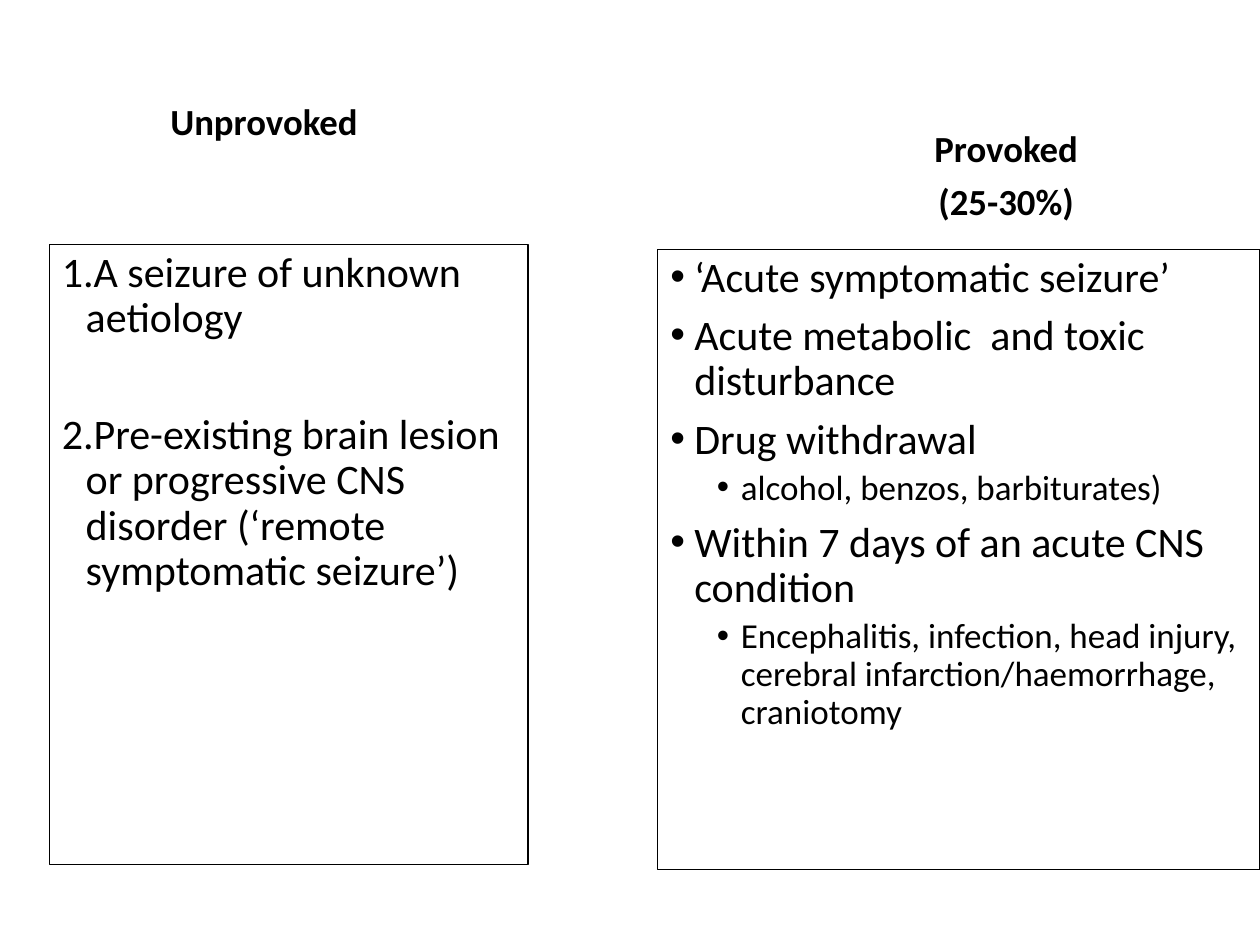
from lxml.etree import SubElement as Sub
from pptx import Presentation
from pptx.dml.color import RGBColor
from pptx.enum.text import MSO_ANCHOR as Anchor, MSO_AUTO_SIZE as Fit, PP_ALIGN as Align
from pptx.oxml.ns import qn
from pptx.util import Inches, Pt

INK = "000000"
HEADS = [
    (1, (0, 0.44, 4.19, 0.75), ["Unprovoked"]),
    (3, (5.97, 1.07, 4.03, 0.75), ["Provoked", "(25-30%)"]),
]
LISTS = [
    (2, (0.39, 1.94, 3.8, 4.92), "number", 41, [
        (0, "A seizure of unknown aetiology"),
        (0, "Pre-existing brain lesion or progressive CNS disorder "
            "(‘remote symptomatic seizure’)"),
    ]),
    (4, (5.22, 1.98, 4.78, 4.92), "dot", 7.5, [
        (0, "‘Acute symptomatic seizure’"),
        (0, "Acute metabolic  and toxic disturbance"),
        (0, "Drug withdrawal"),
        (1, "alcohol, benzos, barbiturates)"),
        (0, "Within 7 days of an acute CNS condition"),
        (1, "Encephalitis, infection, head injury, "
            "cerebral infarction/haemorrhage, craniotomy"),
    ]),
]


def color(code):
    return RGBColor.from_string(code)


def place(shape, box, anchor):
    shape.left, shape.top, shape.width, shape.height = map(Inches, box)
    frame = shape.text_frame
    frame.word_wrap, frame.auto_size = True, Fit.NONE
    frame.vertical_anchor = anchor
    return frame


def mark(para, kind, level):
    props = para._p.get_or_add_pPr()
    props.set("marL", str(Inches((0.19, 0.56)[level])))
    props.set("indent", str(Inches(-0.19)))
    if kind == "number":
        Sub(props, qn("a:buFont"), typeface="+mj-lt")
        Sub(props, qn("a:buAutoNum"), type="arabicPeriod")
    else:
        Sub(props, qn("a:buFont"), typeface="Arial")
        Sub(props, qn("a:buChar"), char="•")


def write(frame, text, first, size=24, bold=False, align=Align.LEFT,
          gap=7.5, level=0, kind=None):
    para = frame.paragraphs[0] if first else frame.add_paragraph()
    para.level = level
    if kind:
        mark(para, kind, level)
    para.alignment, para.line_spacing = align, 0.9
    para.space_before = Pt(0 if first else gap)
    run = para.add_run()
    run.text = text
    font = run.font
    font.name, font.size, font.bold = "Calibri", Pt(size), bold
    font.color.rgb = color(INK)


def main():
    """Build the slide comparing unprovoked and provoked seizures."""
    deck = Presentation()
    deck.slide_width, deck.slide_height = Inches(10), Inches(7.5)
    slide = deck.slides.add_slide(deck.slide_layouts.get_by_name("Comparison"))
    title = slide.shapes.title._element
    title.getparent().remove(title)
    holders = {s.placeholder_format.idx: s for s in slide.placeholders}
    for key, box, lines in HEADS:
        frame = place(holders[key], box, Anchor.BOTTOM)
        for i, text in enumerate(lines):
            write(frame, text, i == 0, size=21, bold=True, align=Align.CENTER)
    for key, box, kind, gap, items in LISTS:
        shape = holders[key]
        shape.line.color.rgb, shape.line.width = color(INK), Pt(0.75)
        frame = place(shape, box, Anchor.TOP)
        for i, (level, text) in enumerate(items):
            write(frame, text, i == 0, size=(24, 20)[level],
                  gap=(gap, 3.8)[level], level=level, kind=kind)
    deck.save("out.pptx")


if __name__ == "__main__":
    main()
